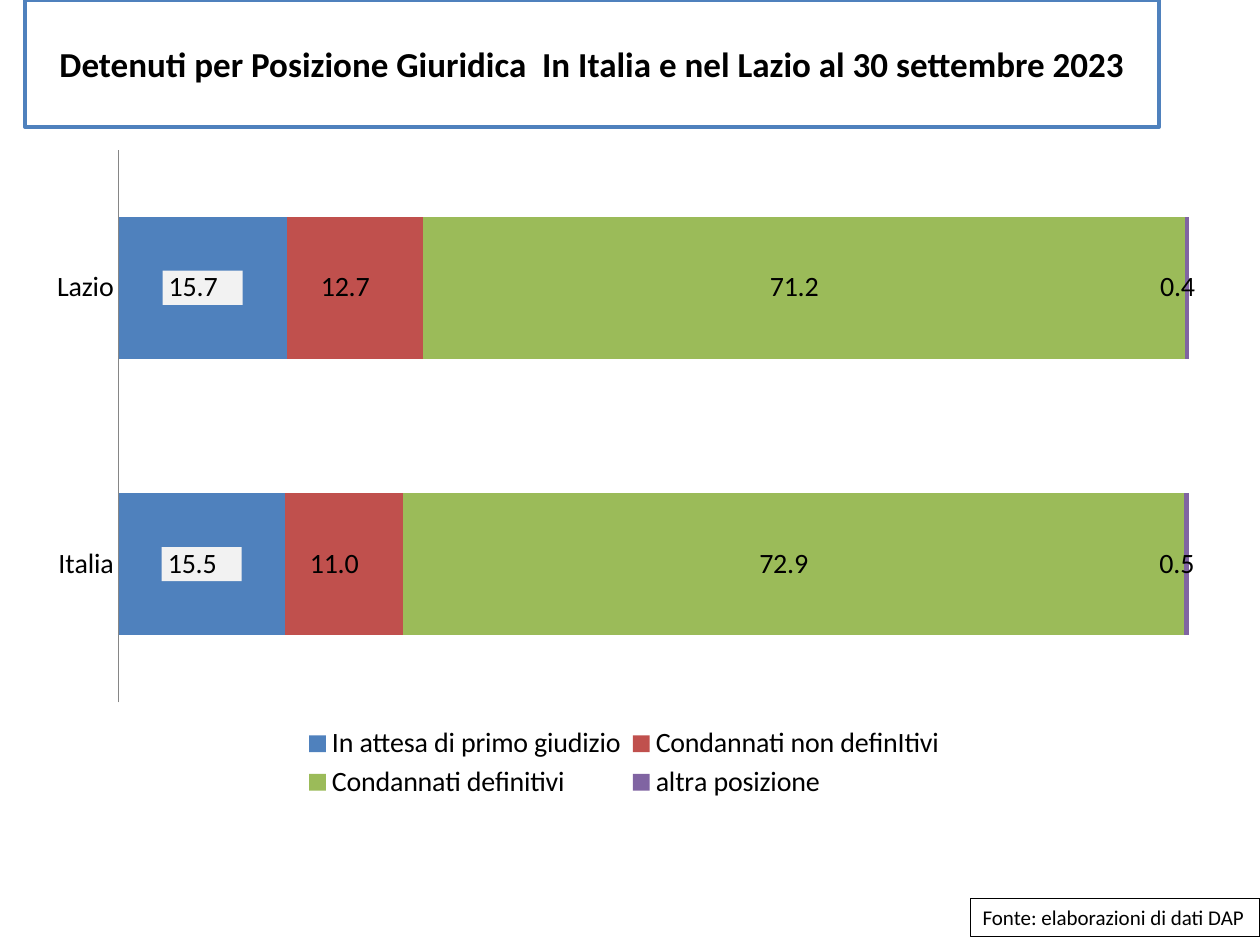
from dataclasses import dataclass

from lxml.etree import SubElement
from pptx import Presentation
from pptx.chart.data import CategoryChartData
from pptx.dml.color import RGBColor
from pptx.enum.chart import XL_CHART_TYPE as ChartType
from pptx.enum.chart import XL_LEGEND_POSITION as LegendPosition
from pptx.enum.chart import XL_TICK_LABEL_POSITION as TickLabelPosition
from pptx.enum.chart import XL_TICK_MARK as TickMark
from pptx.enum.shapes import MSO_SHAPE as Shape
from pptx.enum.text import MSO_ANCHOR as Anchor
from pptx.enum.text import PP_ALIGN as Align
from pptx.oxml import parse_xml
from pptx.oxml.ns import nsdecls, qn
from pptx.util import Pt


@dataclass(frozen=True)
class Theme:
    font: str = "Calibri"
    text: str = "000000"
    paper: str = "FFFFFF"
    accent: str = "4F81BD"
    axis: str = "868686"
    label_fill: str = "F2F2F2"
    title_size: int = 20
    chart_size: int = 16
    source_size: int = 12


THEME = Theme()
NUMBER_FORMAT = r"_-* #,##0.0\ _€_-;\-* #,##0.0\ _€_-"
CATEGORIES = ("Lazio", "Italia")
SERIES = (
    ("In attesa di primo giudizio", (15.7, 15.5), THEME.accent),
    ("Condannati non definItivi", (12.7, 11.0), "C0504D"),
    ("Condannati definitivi", (71.2, 72.9), "9BBB59"),
    ("altra posizione", (0.4, 0.5), "8064A2"),
)


def rgb(value):
    return RGBColor.from_string(value)


def style_font(font, size, bold=False):
    font.name = THEME.font
    font.size = Pt(size)
    font.bold = bold
    font.color.rgb = rgb(THEME.text)


def add_framed_text(slide, box, text, size, line, line_width,
                    align=Align.LEFT, bold=False, wrap=True):
    shape = slide.shapes.add_shape(Shape.RECTANGLE, *map(Pt, box))
    shape.shadow.inherit = False
    shape.fill.solid()
    shape.fill.fore_color.rgb = rgb(THEME.paper)
    shape.line.color.rgb = rgb(line)
    shape.line.width = Pt(line_width)
    frame = shape.text_frame
    frame.word_wrap = wrap
    frame.vertical_anchor = Anchor.MIDDLE
    paragraph = frame.paragraphs[0]
    paragraph.text = text
    paragraph.alignment = align
    style_font(paragraph.font, size, bold)


def manual_layout(x, y, width, height, inner=False):
    """Return a chart layout element; all lengths are fractions of the chart."""
    layout = parse_xml(f"<c:layout {nsdecls('c')}><c:manualLayout/></c:layout>")
    settings = {"layoutTarget": "inner"} if inner else {}
    settings.update(xMode="edge", yMode="edge", x=x, y=y, w=width, h=height)
    for name, value in settings.items():
        SubElement(layout[0], qn(f"c:{name}")).set("val", str(value))
    return layout


def remove_layout(element):
    for layout in element.findall(qn("c:layout")):
        element.remove(layout)


def style_axes(chart):
    category_axis = chart.category_axis
    category_axis.reverse_order = True
    category_axis.major_tick_mark = TickMark.NONE
    category_axis.minor_tick_mark = TickMark.NONE
    category_axis.tick_label_position = TickLabelPosition.NEXT_TO_AXIS
    category_axis.format.line.color.rgb = rgb(THEME.axis)
    category_axis.format.line.width = Pt(0.75)
    value_axis = chart.value_axis
    value_axis.has_major_gridlines = False
    value_axis.visible = False


def style_series(plot):
    for series, (_, _, color) in zip(plot.series, SERIES):
        series.format.fill.solid()
        series.format.fill.fore_color.rgb = rgb(color)
        labels = series.data_labels
        labels.show_value = True
        labels.number_format = NUMBER_FORMAT
        labels.number_format_is_linked = False
        style_font(labels.font, THEME.chart_size)


def fill_labels(series, color):
    number_format = series.data_labels._element.find(qn("c:numFmt"))
    number_format.addnext(parse_xml(
        f"<c:spPr {nsdecls('c', 'a')}><a:solidFill>"
        f'<a:srgbClr val="{color}"/></a:solidFill></c:spPr>'))


def add_position_chart(slide, box):
    data = CategoryChartData(number_format="0.0")
    data.categories = CATEGORIES
    for name, values, _ in SERIES:
        data.add_series(name, values)
    chart = slide.shapes.add_chart(
        ChartType.BAR_STACKED_100, *map(Pt, box), data).chart
    chart.has_title = False
    style_font(chart.font, THEME.chart_size)
    style_axes(chart)

    plot = chart.plots[0]
    plot.vary_by_categories = False
    plot.gap_width = 95
    plot.overlap = 100
    style_series(plot)
    fill_labels(plot.series[0], THEME.label_fill)

    plot_area = chart._chartSpace.chart.plotArea
    remove_layout(plot_area)
    plot_area.insert(0, manual_layout(0.07, 0.02, 0.9, 0.82, inner=True))

    chart.has_legend = True
    legend = chart.legend
    legend.position = LegendPosition.BOTTOM
    legend.include_in_layout = False
    style_font(legend.font, THEME.chart_size)
    remove_layout(legend._element)
    legend._element.find(qn("c:legendPos")).addnext(
        manual_layout(0.22, 0.87, 0.55, 0.12))


def main():
    presentation = Presentation()
    presentation.slide_width = Pt(720)
    presentation.slide_height = Pt(540)
    slide = presentation.slides.add_slide(presentation.slide_layouts[6])
    add_framed_text(
        slide, (14.4, 0, 648, 72.7),
        "Detenuti per Posizione Giuridica  In Italia e nel Lazio al 30 settembre 2023",
        THEME.title_size, THEME.accent, 2, Align.CENTER, bold=True)
    add_framed_text(
        slide, (554.4, 513.4, 165.6, 21.6), "Fonte: elaborazioni di dati DAP",
        THEME.source_size, THEME.text, 0.75, wrap=False)
    add_position_chart(slide, (20.2, 77.8, 679.7, 385.2))
    presentation.save("out.pptx")


if __name__ == "__main__":
    main()
